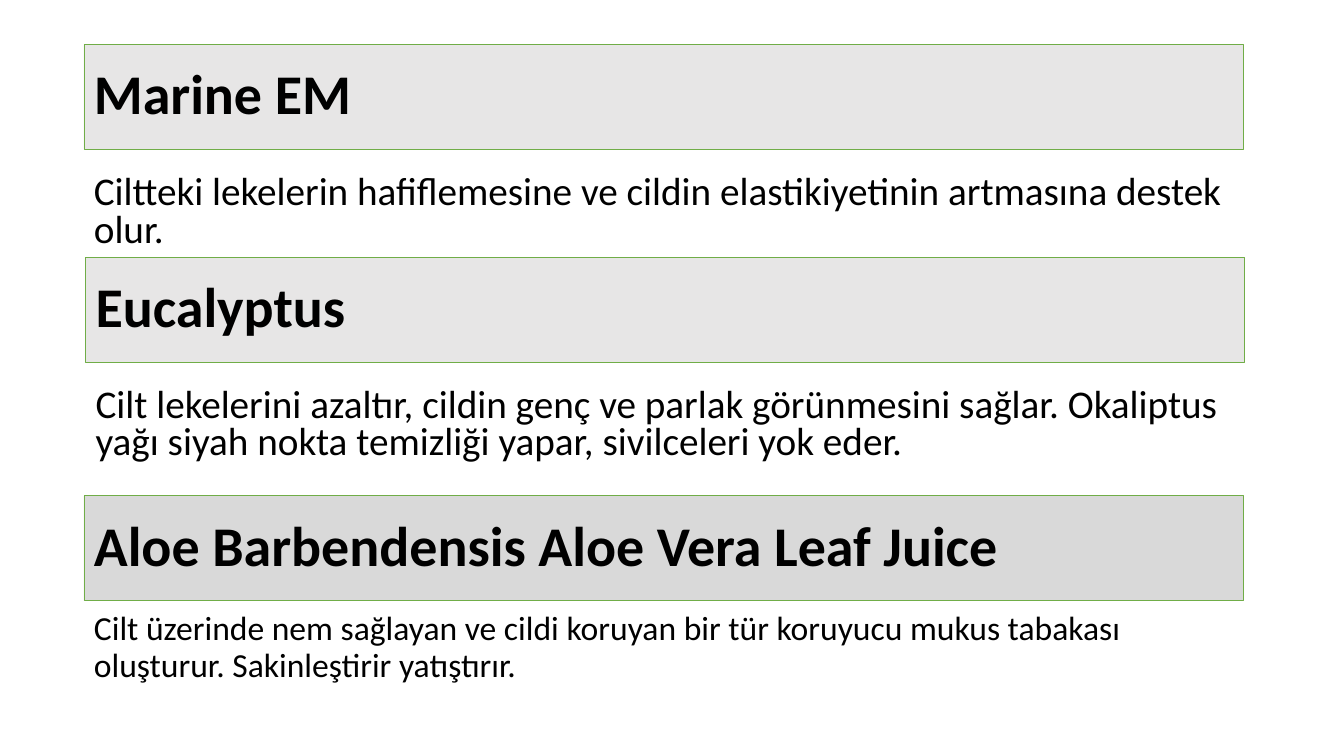
from dataclasses import dataclass
from pptx import Presentation
from pptx.dml.color import RGBColor as RGB
from pptx.enum.shapes import MSO_SHAPE as Shape
from pptx.enum.text import MSO_ANCHOR as Anchor, PP_ALIGN as Align
from pptx.util import Pt


@dataclass(frozen=True)
class Theme:
    font: str = "Calibri"
    ink: RGB = RGB(0, 0, 0)
    edge: RGB = RGB(0x70, 0xAD, 0x47)
    pale: RGB = RGB(0xE7, 0xE6, 0xE6)
    grey: RGB = RGB(0xD9, 0xD9, 0xD9)
    white: RGB = RGB(255, 255, 255)
    head: int = 40
    body: int = 28
    small: int = 24


THEME = Theme()
WIDTH, BAR = 828, 75

# left, top, bar fill, title, text, text size, line spacing, gap, text height, text fill
ITEMS = [
    (60, 31.7, THEME.pale, "Marine EM",
     "Ciltteki lekelerin hafiflemesine ve cildin elastikiyetinin artmasına destek olur.",
     THEME.body, 0.8, 15, 65.5, None),
    (61.2, 183.6, THEME.pale, "Eucalyptus",
     "Cilt lekelerini azaltır, cildin genç ve parlak görünmesini sağlar. "
     "Okaliptus yağı siyah nokta temizliği yapar, sivilceleri yok eder.",
     THEME.body, 0.8, 15, 65.5, None),
    (60, 354.2, THEME.grey, "Aloe Barbendensis Aloe Vera Leaf Juice",
     "Cilt üzerinde nem sağlayan ve cildi koruyan bir tür koruyucu mukus tabakası "
     "oluşturur. Sakinleştirir yatıştırır.",
     THEME.small, 0.9, 4.2, 95, THEME.white),
]


def write(shape, text, size, lead, bold=False):
    frame = shape.text_frame
    frame.word_wrap = True
    frame.vertical_anchor = Anchor.MIDDLE if bold else Anchor.TOP
    para = frame.paragraphs[0]
    para.text = text
    para.alignment = Align.LEFT
    para.line_spacing = lead
    para.space_before = Pt(0 if bold else 10)
    font = para.font
    font.name, font.size, font.bold = THEME.font, Pt(size), bold
    font.color.rgb = THEME.ink


def add_box(slide, left, top, height, fill, edge=None):
    """Add a rectangle, or a text box when there is no fill."""
    box = [Pt(n) for n in (left, top, WIDTH, height)]
    if fill is None:
        return slide.shapes.add_textbox(*box)
    shape = slide.shapes.add_shape(Shape.RECTANGLE, *box)
    shape.shadow.inherit = False
    shape.fill.solid()
    shape.fill.fore_color.rgb = fill
    if edge is None:
        shape.line.fill.background()
    else:
        shape.line.color.rgb = edge
        shape.line.width = Pt(0.5)
    return shape


def add_item(slide, left, top, fill, title, text, size, lead, gap, height, back):
    """Add a title bar with its text below."""
    body = add_box(slide, left, top + BAR + gap, height, back)
    write(body, text, size, lead)
    bar = add_box(slide, left, top, BAR, fill, THEME.edge)
    write(bar, title, THEME.head, 0.9, bold=True)


def main():
    deck = Presentation()
    deck.slide_width, deck.slide_height = Pt(960), Pt(540)
    slide = deck.slides.add_slide(deck.slide_layouts[6])
    for item in ITEMS:
        add_item(slide, *item)
    deck.save("out.pptx")


if __name__ == "__main__":
    main()
